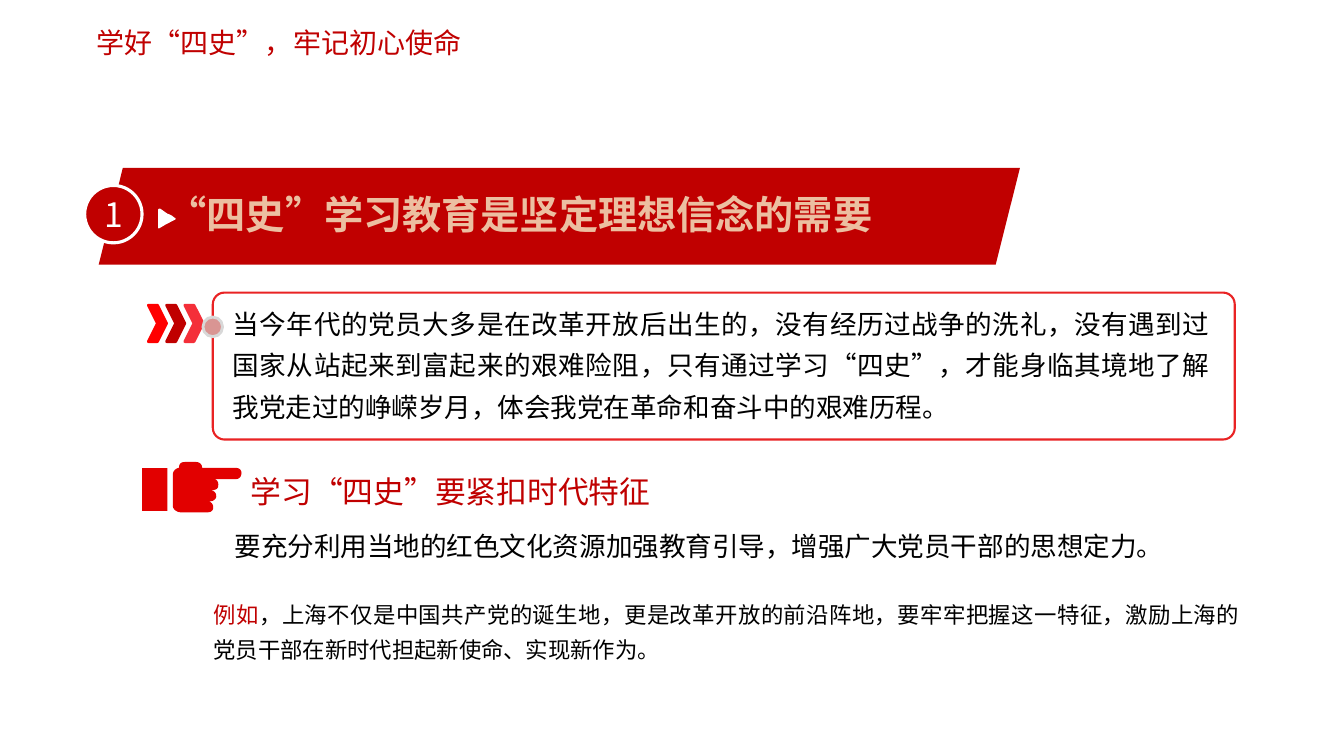
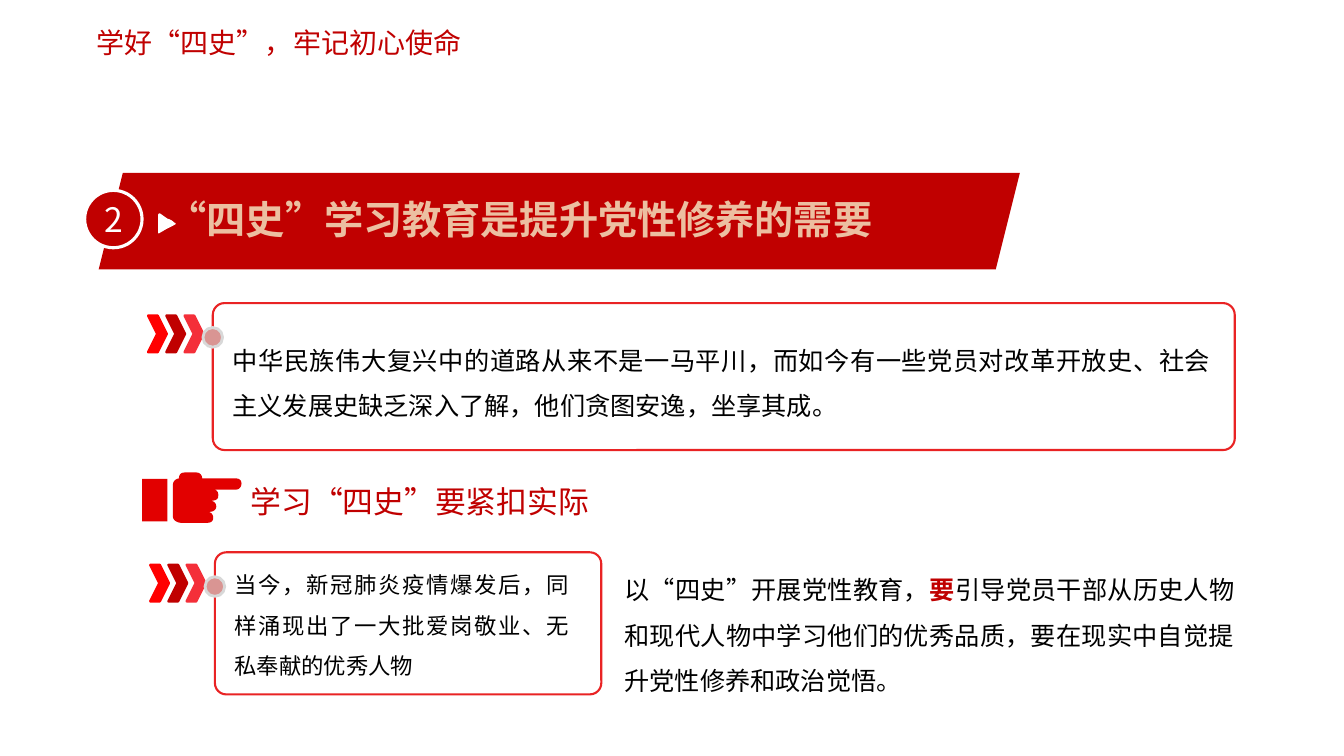
"""Build two slides on why the study of the "four histories" matters."""
from lxml.etree import SubElement
from pptx import Presentation
from pptx.dml.color import RGBColor
from pptx.enum.lang import MSO_LANGUAGE_ID
from pptx.enum.shapes import MSO_SHAPE
from pptx.enum.text import MSO_ANCHOR, MSO_AUTO_SIZE, PP_ALIGN
from pptx.oxml.ns import qn
from pptx.util import Pt

FONT = "Noto Sans CJK SC"
RED, BLACK, WHITE, GOLD = "C00000", "000000", "FFFFFF", "ECBFA1"
BORDER, HAND_RED, DOT, DOT_RING = "E92324", "E20000", "D99593", "D8D8D8"
CHEVRONS = ["FF0000", RED, "F42F39"]

HEADER = "学好“四史”，牢记初心使命"
LESSONS = [
    {
        "number": "1",
        "heading": "“四史”学习教育是坚定理想信念的需要",
        "banner_top": 120,
        "panels": [
            {"box": (152, 209, 730, 105), "inset": 0.5, "text_width": 713, "size": 19, "spacing": 1.3,
             "text": "当今年代的党员大多是在改革开放后出生的，没有经历过战争的洗礼，没有遇到过国家从站起来"
                     "到富起来的艰难险阻，只有通过学习“四史”，才能身临其境地了解我党走过的峥嵘岁月，"
                     "体会我党在革命和奋斗中的艰难历程。"},
        ],
        "point": "学习“四史”要紧扣时代特征",
        "point_top": 334,
        "notes": [
            {"box": (160.5, 368, 713, 67), "size": 19, "spacing": 1.3,
             "text": "要充分利用当地的红色文化资源加强教育引导，增强广大党员干部的思想定力。"},
            {"box": (145.5, 420, 748, 58), "size": 16, "spacing": 1.3,
             "text": [("例如", RED, False),
                      ("，上海不仅是中国共产党的诞生地，更是改革开放的前沿阵地，要牢牢把握这一特征，"
                       "激励上海的党员干部在新时代担起新使命、实现新作为。", BLACK, False)]},
        ],
    },
    {
        "number": "2",
        "heading": "“四史”学习教育是提升党性修养的需要",
        "banner_top": 123.5,
        "panels": [
            {"box": (152, 216.5, 730, 105), "inset": 15.5, "text_width": 713, "size": 18, "spacing": 1.5,
             "text": "中华民族伟大复兴中的道路从来不是一马平川，而如今有一些党员对改革开放史、社会主义发展史"
                     "缺乏深入了解，他们贪图安逸，坐享其成。"},
            {"box": (153.5, 394.5, 276, 101.5), "inset": 0.5, "text_width": 253, "size": 16, "spacing": 1.5,
             "text": "当今，新冠肺炎疫情爆发后，同样涌现出了一大批爱岗敬业、无私奉献的优秀人物"},
        ],
        "point": "学习“四史”要紧扣实际",
        "point_top": 341.5,
        "notes": [
            {"box": (439, 396, 450, 105), "size": 18, "spacing": 1.5,
             "text": [("以“四史”开展党性教育，", BLACK, False), ("要", RED, True),
                      ("引导党员干部从历史人物和现代人物中学习他们的优秀品质，要在现实中自觉提升党性修养"
                       "和政治觉悟。", BLACK, False)]},
        ],
    },
]

# An outline is a list of steps: one point for a line, three for a Bezier curve.
ARROWHEAD = [
    [(12.2, 7.9)], [(6.5, 10.8)],
    [(5, 11.5), (2.9, 13), (1.4, 13.7)], [(0.7, 14.4), (0, 14.4), (0, 13.7)],
    [(0, 1.4)], [(0, 0), (0.7, 0), (1.4, 0)], [(6.5, 3.6)],
    [(8.6, 4.3), (10.1, 5), (11.5, 6.5)], [(12.2, 6.5), (13, 7.2), (12.2, 7.9)],
]
HAND = [
    [(28.8, 32.4)], [(28.8, 30.2), (27.4, 28.1), (24.5, 28.1)], [(26.6, 28.1)],
    [(28.8, 28.1), (31, 26.6), (31, 24.5)], [(31, 21.6), (28.8, 20.2), (26.6, 20.2)],
    [(28.8, 20.2), (33.1, 20.2), (32.4, 15.8)], [(32.4, 13.7), (31, 12.2), (28.8, 12.2)],
    [(45.4, 12.2)], [(47.5, 12.2), (49, 10.1), (49, 7.9)],
    [(49, 5.8), (47.5, 4.3), (45.4, 4.3)], [(20.9, 4.3)],
    [(20.9, 1.4), (18.7, 0), (16.6, 0)], [(8.6, 0)], [(5.8, 0), (4.3, 1.4), (4.3, 4.3)],
    [(2.2, 4.3), (0, 6.5), (0, 8.6)], [(0, 31.7)], [(0, 33.8), (2.9, 36), (5.8, 36)],
    [(24.5, 36)], [(27.4, 36), (28.8, 34.6), (28.8, 32.4)],
]


def rgb(value):
    return RGBColor.from_string(value)


def write(shape, text, size=18, color=BLACK, bold=False, align=PP_ALIGN.LEFT, spacing=1.0,
          anchor=MSO_ANCHOR.TOP, margins=(7.2, 3.6)):
    frame = shape.text_frame
    frame.word_wrap = True
    frame.auto_size = MSO_AUTO_SIZE.NONE
    frame.vertical_anchor = anchor
    frame.margin_left = frame.margin_right = Pt(margins[0])
    frame.margin_top = frame.margin_bottom = Pt(margins[1])
    paragraph = frame.paragraphs[0]
    paragraph.alignment = align
    paragraph.line_spacing = spacing
    for words, run_color, run_bold in [(text, color, bold)] if isinstance(text, str) else text:
        run = paragraph.add_run()
        run.text = words
        run.font.size = Pt(size)
        run.font.bold = run_bold
        run.font.color.rgb = rgb(run_color)
        run.font.name = FONT
        run.font.language_id = MSO_LANGUAGE_ID.SIMPLIFIED_CHINESE
        SubElement(run.font._element, qn("a:ea"), typeface=FONT)


def add_text(slide, box, text, **style):
    shape = slide.shapes.add_textbox(*map(Pt, box))
    write(shape, text, **style)
    return shape


def paint(shape, fill=None, line=None, weight=1):
    shape.shadow.inherit = False
    if fill:
        shape.fill.solid()
        shape.fill.fore_color.rgb = rgb(fill)
    else:
        shape.fill.background()
    if line:
        shape.line.color.rgb = rgb(line)
        shape.line.width = Pt(weight)
    else:
        shape.line.fill.background()
    return shape


def add_shape(slide, kind, box, **look):
    return paint(slide.shapes.add_shape(kind, *map(Pt, box)), **look)


def trace(outline, steps=6):
    points = [outline[0][0]]
    for step in outline[1:]:
        if len(step) == 1:
            points += step
            continue
        controls = [points[-1], *step]
        for t in (i / steps for i in range(1, steps + 1)):
            weights = ((1 - t) ** 3, 3 * t * (1 - t) ** 2, 3 * t * t * (1 - t), t ** 3)
            points.append(tuple(sum(w * c[axis] for w, c in zip(weights, controls)) for axis in (0, 1)))
    return points


def add_outline(slide, outline, left, top, fill):
    start, *others = [(Pt(left + x), Pt(top + y)) for x, y in trace(outline)]
    builder = slide.shapes.build_freeform(*start)
    builder.add_line_segments(others, close=True)
    paint(builder.convert_to_shape(), fill=fill)


def add_banner(slide, number, heading, top):
    add_shape(slide, MSO_SHAPE.PARALLELOGRAM, (70.5, top, 658, 69), fill=RED)
    title = slide.shapes.title
    slide.shapes.element.append(title.element)
    title.left, title.top, title.width, title.height = map(Pt, (112.5, top + 12.5, 543, 41))
    write(title, heading, size=28, color=GOLD, bold=True)
    add_outline(slide, ARROWHEAD, 113, top + 29, WHITE)
    badge = add_shape(slide, MSO_SHAPE.OVAL, (60.5, top + 12.5, 41, 41), fill=RED, line=WHITE, weight=2.25)
    write(badge, number, size=24, color=WHITE, align=PP_ALIGN.CENTER, anchor=MSO_ANCHOR.MIDDLE,
          margins=(0, 0))


def add_panel(slide, box, inset, text_width, text, size, spacing):
    left, top, width, height = box
    for i, color in enumerate(CHEVRONS):
        add_shape(slide, MSO_SHAPE.CHEVRON, (left - 46 + 13 * i, top + 9, 13, 26),
                  fill=color, line=color, weight=2)
    frame = add_shape(slide, MSO_SHAPE.ROUNDED_RECTANGLE, box, line=BORDER, weight=1.5)
    frame.adjustments[0] = 0.08
    add_shape(slide, MSO_SHAPE.FLOWCHART_CONNECTOR, (left - 7, top + 17.5, 14, 14),
              fill=DOT, line=DOT_RING, weight=2)
    add_text(slide, (left + 7, top + inset, text_width, height - 2 * inset), text,
             size=size, spacing=spacing, align=PP_ALIGN.JUSTIFY)


def add_point(slide, text, top):
    add_text(slide, (172, top, 400, 34), text, size=22, color=RED)
    add_outline(slide, HAND, 123.5, top - 4, HAND_RED)
    add_shape(slide, MSO_SHAPE.RECTANGLE, (101.5, top + 0.5, 18, 30.5), fill=HAND_RED)


def main():
    deck = Presentation()
    deck.slide_width, deck.slide_height = Pt(960), Pt(540)
    layout = deck.slide_layouts.get_by_name("Title Only")
    slides = [deck.slides.add_slide(layout) for _ in LESSONS]
    header = add_text(slides[0], (62, 15, 284, 32), HEADER, size=20, color=RED, align=PP_ALIGN.JUSTIFY)
    layout.shapes.element.append(header.element)
    for slide, lesson in zip(slides, LESSONS):
        add_banner(slide, lesson["number"], lesson["heading"], lesson["banner_top"])
        for panel in lesson["panels"]:
            add_panel(slide, **panel)
        add_point(slide, lesson["point"], lesson["point_top"])
        for note in lesson["notes"]:
            add_text(slide, align=PP_ALIGN.JUSTIFY, **note)
    deck.save("out.pptx")


if __name__ == "__main__":
    main()
